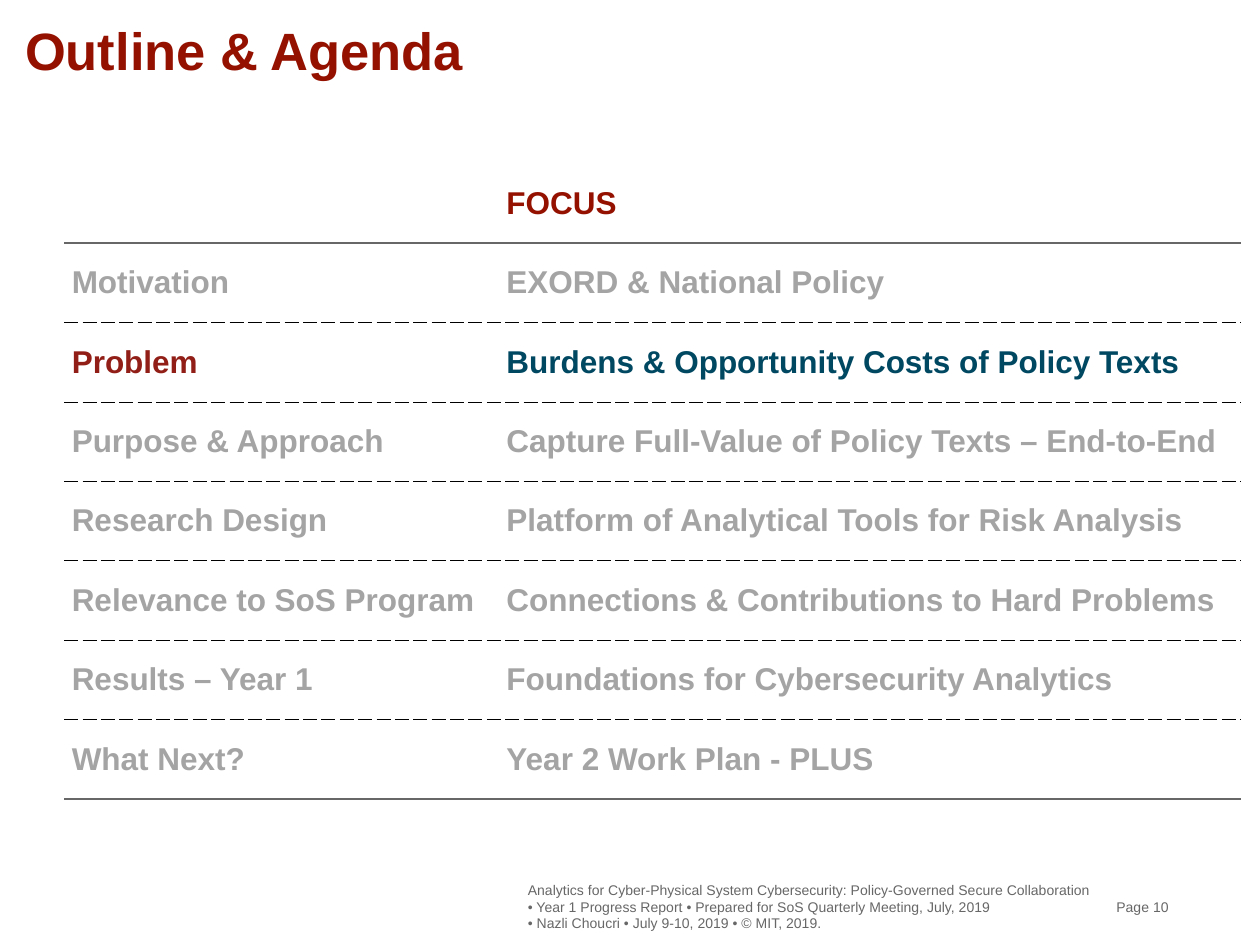
import pptx
import pptx.util
import pptx.dml.color
import pptx.enum.text
import pptx.oxml
import pptx.oxml.ns

THEME = {
    "font": "Arial",
    "title": "941100",
    "muted": "A4A4A4",
    "current": "921F17",
    "current_focus": "004862",
    "footer": "676767",
    "dash": "000000",
    "title_size": 30,
    "table_size": 18,
    "footer_size": 8,
}

AGENDA = [
    ("", "FOCUS"),
    ("Motivation", "EXORD & National Policy"),
    ("Problem", "Burdens & Opportunity Costs of Policy Texts"),
    ("Purpose & Approach", "Capture Full-Value of Policy Texts – End-to-End"),
    ("Research Design", "Platform of Analytical Tools for Risk Analysis"),
    ("Relevance to SoS Program", "Connections & Contributions to Hard Problems"),
    ("Results – Year 1", "Foundations for Cybersecurity Analytics"),
    ("What Next?", "Year 2 Work Plan - PLUS"),
]
CURRENT_ROW = 2
COLUMN_WIDTHS = (3.45, 5.89)
ROW_HEIGHT = 0.63

FOOTERS = [
    (4.11, 4.63, "Analytics for Cyber-Physical System Cybersecurity: Policy-Governed Secure Collaboration\n"
                 "• Year 1 Progress Report • Prepared for SoS Quarterly Meeting, July, 2019\n"
                 "• Nazli Choucri • July 9-10, 2019 • © MIT, 2019."),
    (8.78, 0.68, "Page 10"),
]


def format_text(text_frame, size, color, bold):
    for paragraph in text_frame.paragraphs:
        paragraph.alignment = pptx.enum.text.PP_ALIGN.LEFT
        for run in paragraph.runs:
            run.font.name = THEME["font"]
            run.font.size = pptx.util.Pt(size)
            run.font.bold = bold
            run.font.color.rgb = pptx.dml.color.RGBColor.from_string(color)


def border(side, color=None, width=0, dash="solid"):
    namespace = pptx.oxml.ns.nsdecls("a")
    if color is None:
        return pptx.oxml.parse_xml(f'<a:{side} {namespace} w="0"><a:noFill/></a:{side}>')
    return pptx.oxml.parse_xml(
        f'<a:{side} {namespace} w="{pptx.util.Pt(width)}"><a:solidFill><a:srgbClr val="{color}"/></a:solidFill>'
        f'<a:prstDash val="{dash}"/></a:{side}>')


inches = pptx.util.Inches
presentation = pptx.Presentation()
presentation.slide_width = inches(10)
presentation.slide_height = inches(7.5)
slide = presentation.slides.add_slide(presentation.slide_layouts[5])

title = slide.shapes.title
title.left, title.top, title.width, title.height = map(inches, (0.2, 0.11, 9.6, 0.53))
title_frame = title.text_frame
title_frame.text = "Outline & Agenda"
title_frame.auto_size = pptx.enum.text.MSO_AUTO_SIZE.NONE
title_frame.vertical_anchor = pptx.enum.text.MSO_ANCHOR.BOTTOM
title_frame.margin_left = title_frame.margin_right = 0
title_frame.margin_top = title_frame.margin_bottom = 0
format_text(title_frame, THEME["title_size"], THEME["title"], True)

for left, width, text in FOOTERS:
    footer = slide.shapes.add_textbox(inches(left), inches(6.96), inches(width), inches(0.47))
    footer_frame = footer.text_frame
    footer_frame.text = text
    footer_frame.word_wrap = True
    footer_frame.vertical_anchor = pptx.enum.text.MSO_ANCHOR.MIDDLE
    footer_frame.margin_left = footer_frame.margin_right = inches(0.08)
    footer_frame.margin_top = footer_frame.margin_bottom = inches(0.04)
    format_text(footer_frame, THEME["footer_size"], THEME["footer"], False)

table = slide.shapes.add_table(
    len(AGENDA), len(COLUMN_WIDTHS), inches(0.51), inches(1.3),
    inches(sum(COLUMN_WIDTHS)), inches(ROW_HEIGHT * len(AGENDA))).table
table.first_row = False
table.horz_banding = False
for column, width in zip(table.columns, COLUMN_WIDTHS):
    column.width = inches(width)

solid_rule = (THEME["footer"], 1, "solid")
dashed_rule = (THEME["dash"], 0.25, "dash")
last_row = len(AGENDA) - 1
rules = [(None,), solid_rule] + [dashed_rule] * (last_row - 1) + [solid_rule]

for row_index, row_texts in enumerate(AGENDA):
    row_colors = (THEME["muted"], THEME["muted"])
    if row_index == 0:
        row_colors = (THEME["title"], THEME["title"])
    elif row_index == CURRENT_ROW:
        row_colors = (THEME["current"], THEME["current_focus"])
    for column_index, (text, color) in enumerate(zip(row_texts, row_colors)):
        cell = table.cell(row_index, column_index)
        cell.text_frame.text = text
        cell.vertical_anchor = pptx.enum.text.MSO_ANCHOR.MIDDLE
        cell.margin_left, cell.margin_right = inches(0.06), inches(0.07)
        cell.margin_top = cell.margin_bottom = 0
        cell.fill.background()
        format_text(cell.text_frame, THEME["table_size"], color, True)
        borders = [border("lnL"), border("lnR"),
                   border("lnT", *rules[row_index]), border("lnB", *rules[row_index + 1])]
        properties = cell._tc.get_or_add_tcPr()
        for position, line in enumerate(borders):
            properties.insert(position, line)

presentation.save("out.pptx")
